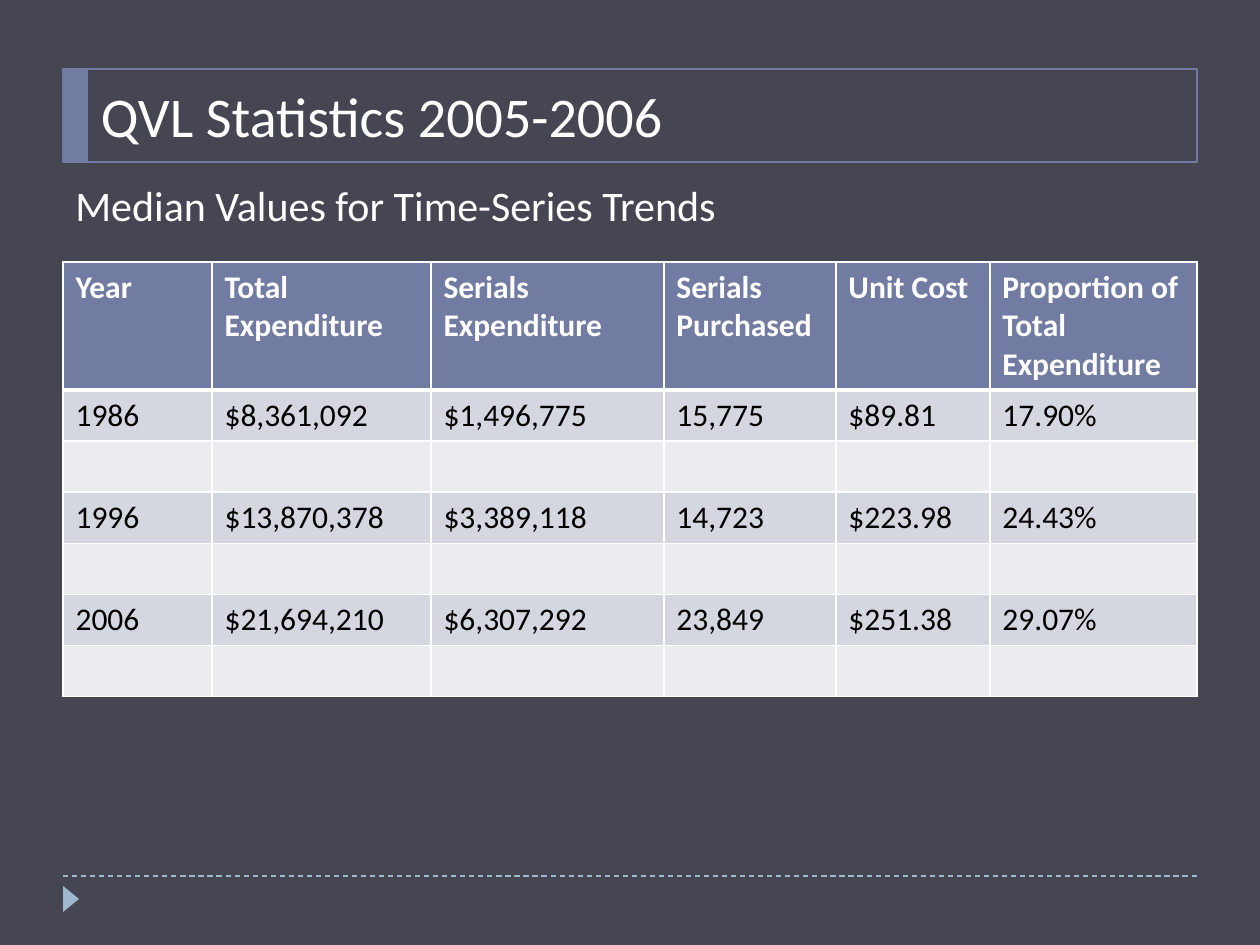
from lxml.etree import SubElement
from pptx import Presentation
from pptx.dml.color import RGBColor
from pptx.enum.dml import MSO_LINE_DASH_STYLE as Dash
from pptx.enum.shapes import MSO_CONNECTOR as Connector, MSO_SHAPE as Shape
from pptx.enum.text import MSO_ANCHOR as Anchor, PP_ALIGN as Align
from pptx.oxml.ns import qn
from pptx.util import Emu, Pt

PX_PER_INCH = 126
FONT = "Calibri"
WHITE, BLACK, SLATE = "FFFFFF", "000000", "464653"
INDIGO, SKY = "727CA3", "9FB8CD"
BANDS = ("D5D7E0", "EBECF0")

HEADINGS = ("Year", "Total Expenditure", "Serials Expenditure",
            "Serials Purchased", "Unit Cost", "Proportion of Total Expenditure")
STATISTICS = (
    ("1986", "$8,361,092", "$1,496,775", "15,775", "$89.81", "17.90%"),
    ("1996", "$13,870,378", "$3,389,118", "14,723", "$223.98", "24.43%"),
    ("2006", "$21,694,210", "$6,307,292", "23,849", "$251.38", "29.07%"),
)
COLUMN_WIDTHS = (149, 219, 233, 172, 154, 207)
HEADER_HEIGHT, ROW_HEIGHT = 128, 51


def px(length):
    return Emu(round(length * 914400 / PX_PER_INCH))


def color(hex_code):
    return RGBColor.from_string(hex_code)


def write(frame, text, size, hex_code, bold=False, space_before=0):
    para = frame.paragraphs[0]
    para.alignment = Align.LEFT
    para.space_before = Pt(space_before)
    span = para.add_run()
    span.text = text
    span.font.name = FONT
    span.font.size = Pt(size)
    span.font.bold = bold
    span.font.color.rgb = color(hex_code)


def add_box(page, kind, left, top, width, height, fill=None, line=None):
    box = page.shapes.add_shape(kind, px(left), px(top), px(width), px(height))
    box.shadow.inherit = False
    if fill:
        box.fill.solid()
        box.fill.fore_color.rgb = color(fill)
    else:
        box.fill.background()
    if line:
        box.line.color.rgb = color(line)
        box.line.width = Pt(0.75)
    else:
        box.line.fill.background()
    return box


def add_title(page, left, top, width, height):
    add_box(page, Shape.RECTANGLE, left, top, 25, height + 1, fill=INDIGO)
    box = add_box(page, Shape.RECTANGLE, left, top, width, height, line=INDIGO)
    frame = box.text_frame
    frame.word_wrap = True
    frame.vertical_anchor = Anchor.MIDDLE
    frame.margin_left = px(38)
    write(frame, "QVL Statistics 2005-2006", 32, WHITE)


def add_subtitle(page, left, top, width, height):
    box = page.shapes.add_textbox(px(left), px(top), px(width), px(height))
    frame = box.text_frame
    frame.word_wrap = True
    frame.vertical_anchor = Anchor.MIDDLE
    write(frame, "Median Values for Time-Series Trends", 24, WHITE, space_before=6)


def style_cell(cell, fill, top=1, bottom=1):
    # Borders come before the fill in the cell properties
    properties = cell._tc.get_or_add_tcPr()
    for side, width in (("L", 1), ("R", 1), ("T", top), ("B", bottom)):
        border = SubElement(properties, qn(f"a:ln{side}"), w=str(Pt(width)))
        paint = SubElement(border, qn("a:solidFill"))
        SubElement(paint, qn("a:srgbClr"), val=WHITE)
    cell.fill.solid()
    cell.fill.fore_color.rgb = color(fill)


def add_statistics(page, left, top):
    # Every year is followed by an empty row
    blank = ("",) * len(HEADINGS)
    rows = [HEADINGS]
    for record in STATISTICS:
        rows += [record, blank]
    height = HEADER_HEIGHT + ROW_HEIGHT * (len(rows) - 1)
    table = page.shapes.add_table(len(rows), len(HEADINGS), px(left), px(top),
                                  px(sum(COLUMN_WIDTHS)), px(height)).table
    table.horz_banding = False
    for column, width in zip(table.columns, COLUMN_WIDTHS):
        column.width = px(width)
    for r, values in enumerate(rows):
        header = r == 0
        table.rows[r].height = px(HEADER_HEIGHT if header else ROW_HEIGHT)
        for c, value in enumerate(values):
            cell = table.cell(r, c)
            style_cell(cell, INDIGO if header else BANDS[(r - 1) % 2],
                       top=3 if r == 1 else 1, bottom=3 if header else 1)
            if value:
                write(cell.text_frame, value, 18, WHITE if header else BLACK, header)


def add_footer(page, left, top, width):
    rule = page.shapes.add_connector(Connector.STRAIGHT, px(left), px(top),
                                     px(left + width), px(top))
    rule.line.color.rgb = color(SKY)
    rule.line.width = Pt(0.75)
    rule.line.dash_style = Dash.DASH
    SubElement(rule._element.spPr, qn("a:effectLst"))
    marker = add_box(page, Shape.ISOSCELES_TRIANGLE, left - 5, top + 15, 26, 16, fill=SKY)
    marker.rotation = 90


def main():
    deck = Presentation()
    deck.slide_width, deck.slide_height = px(1260), px(945)
    page = deck.slides.add_slide(deck.slide_layouts[6])
    page.background.fill.solid()
    page.background.fill.fore_color.rgb = color(SLATE)

    left, width = 63, 1134
    add_footer(page, left, 876, width)
    add_title(page, left, 69, width, 93)
    add_statistics(page, left, 262)
    add_subtitle(page, left, 168, width, 73)
    deck.save("out.pptx")


if __name__ == "__main__":
    main()
